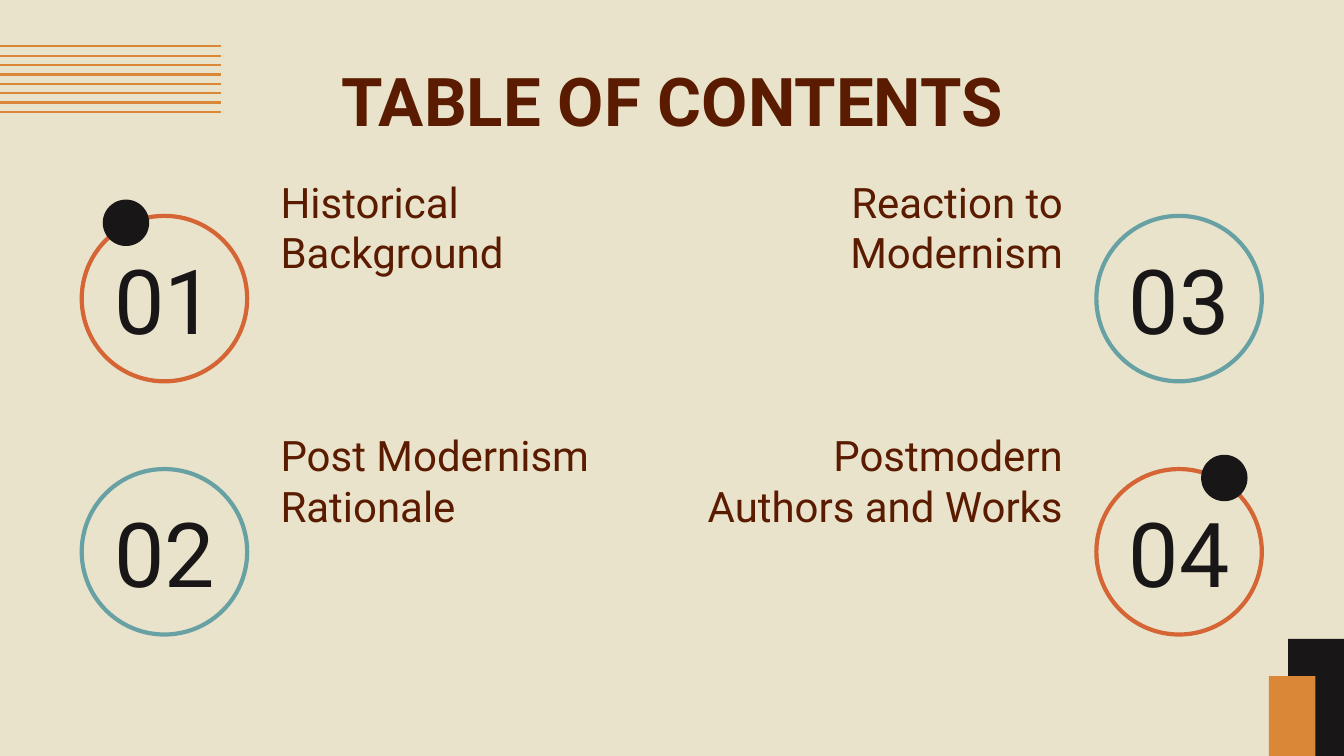
from dataclasses import dataclass

from lxml import etree
from pptx import Presentation
from pptx.dml.color import RGBColor
from pptx.enum.shapes import MSO_CONNECTOR, MSO_SHAPE
from pptx.enum.text import MSO_ANCHOR, MSO_AUTO_SIZE, PP_ALIGN
from pptx.oxml.ns import qn
from pptx.util import Cm, Pt


@dataclass(frozen=True)
class Theme:
    font: str = "Roboto"
    paper: str = "E9E3CB"
    brown: str = "5A1B00"
    ink: str = "191617"
    amber: str = "DA8737"
    teal: str = "68A1A4"
    rust: str = "D56534"
    title_size: int = 48
    number_size: int = 64
    label_size: int = 30


THEME = Theme()
WIDTH, HEIGHT = 33.87, 19.05
RING, DOT = 4.17, 1.17
LABEL_WIDTH, LABEL_HEIGHT = 10.19, 3.33


def rgb(value):
    return RGBColor.from_string(value)


def place(sp, x, y, w, h):
    sp.left, sp.top, sp.width, sp.height = Cm(x), Cm(y), Cm(w), Cm(h)


def write(sp, text, size, color, align, anchor, bold=False):
    tf = sp.text_frame
    tf.text = text
    tf.word_wrap = True
    tf.auto_size = MSO_AUTO_SIZE.NONE
    tf.vertical_anchor = anchor
    tf.margin_left = tf.margin_right = tf.margin_top = tf.margin_bottom = Cm(0.33)
    p = tf.paragraphs[0]
    p.alignment = align
    p.space_before = Pt(0)
    font = p.runs[0].font
    font.name, font.size, font.bold = THEME.font, Pt(size), bold
    font.color.rgb = rgb(color)


def remove_bullet(sp):
    pPr = sp.text_frame.paragraphs[0]._p.get_or_add_pPr()
    pPr.set("marL", "0")
    pPr.set("indent", "0")
    etree.SubElement(pPr, qn("a:buNone"))


def add_solid(slide, kind, x, y, w, h, color):
    sp = slide.shapes.add_shape(kind, Cm(x), Cm(y), Cm(w), Cm(h))
    sp.shadow.inherit = False
    sp.fill.solid()
    sp.fill.fore_color.rgb = rgb(color)
    sp.line.fill.background()


def add_ring(slide, x, y, color):
    sp = slide.shapes.add_shape(MSO_SHAPE.OVAL, Cm(x), Cm(y), Cm(RING), Cm(RING))
    sp.shadow.inherit = False
    sp.fill.background()
    sp.line.color.rgb = rgb(color)
    sp.line.width = Pt(3)


def add_stripes(slide, x, y, w, h, count=8):
    for i in range(count):
        stripe_y = Cm(y + h * i / (count - 1))
        line = slide.shapes.add_connector(
            MSO_CONNECTOR.STRAIGHT, Cm(x), stripe_y, Cm(x + w), stripe_y)
        line.line.color.rgb = rgb(THEME.amber)
        line.line.width = Pt(1.5)
        etree.SubElement(line._element.spPr, qn("a:effectLst"))


def add_corner_blocks(slide, x, y, w, h):
    add_solid(slide, MSO_SHAPE.RECTANGLE, x + 0.48, y, w - 0.48, h, THEME.ink)
    add_solid(slide, MSO_SHAPE.RECTANGLE, x, y + 0.94, 1.17, h - 0.94, THEME.amber)


def add_title(slide, text, x, y, w, h):
    title = slide.shapes.title
    place(title, x, y, w, h)
    write(title, text, THEME.title_size, THEME.brown,
          PP_ALIGN.CENTER, MSO_ANCHOR.MIDDLE, bold=True)


def add_entry(slide, label, number, text, x, y, w, ring_on_right, dot):
    ring_x = x + w - RING if ring_on_right else x
    label_x = x if ring_on_right else x + w - LABEL_WIDTH
    ring_y = y + 1.45

    place(label, label_x, y, LABEL_WIDTH, LABEL_HEIGHT)
    write(label, text, THEME.label_size, THEME.brown,
          PP_ALIGN.RIGHT if ring_on_right else PP_ALIGN.LEFT, MSO_ANCHOR.BOTTOM)
    remove_bullet(label)

    number_y = ring_y + (RING - LABEL_HEIGHT) / 2
    box = slide.shapes.add_textbox(
        Cm(ring_x), Cm(number_y), Cm(RING), Cm(LABEL_HEIGHT))
    write(box, number, THEME.number_size, THEME.ink,
          PP_ALIGN.CENTER, MSO_ANCHOR.MIDDLE)

    add_ring(slide, ring_x, ring_y, THEME.rust if dot else THEME.teal)
    if dot:
        dx, dy = dot
        add_solid(slide, MSO_SHAPE.OVAL, ring_x + dx, ring_y + dy, DOT, DOT, THEME.ink)


def add_entries(slide, entries, x, y, w, row_step):
    labels = [p for p in slide.placeholders if p.placeholder_format.idx > 0]
    for i, (label, (text, dot)) in enumerate(zip(labels, entries)):
        column, row = divmod(i, 2)
        add_entry(slide, label, f"{i + 1:02}", text,
                  x + column * w / 2, y + row * row_step, w / 2, column == 1, dot)


def main():
    prs = Presentation()
    prs.slide_width, prs.slide_height = Cm(WIDTH), Cm(HEIGHT)
    slide = prs.slides.add_slide(prs.slide_layouts.get_by_name("Comparison"))
    slide.background.fill.solid()
    slide.background.fill.fore_color.rgb = rgb(THEME.paper)

    add_stripes(slide, 0, 1.17, 5.58, 1.65)
    add_corner_blocks(slide, 31.98, 16.1, WIDTH - 31.98, HEIGHT - 16.1)
    add_title(slide, "TABLE OF CONTENTS", 4.37, 1.14, 25.14, 2.72)
    entries = [
        ("Historical Background", (0.53, -0.41)),
        ("Post Modernism Rationale", None),
        ("Reaction to Modernism", None),
        ("Postmodern Authors and Works", (2.64, -0.36)),
    ]
    add_entries(slide, entries, 2.06, 3.99, 29.74, 6.38)
    prs.save("out.pptx")


if __name__ == "__main__":
    main()
